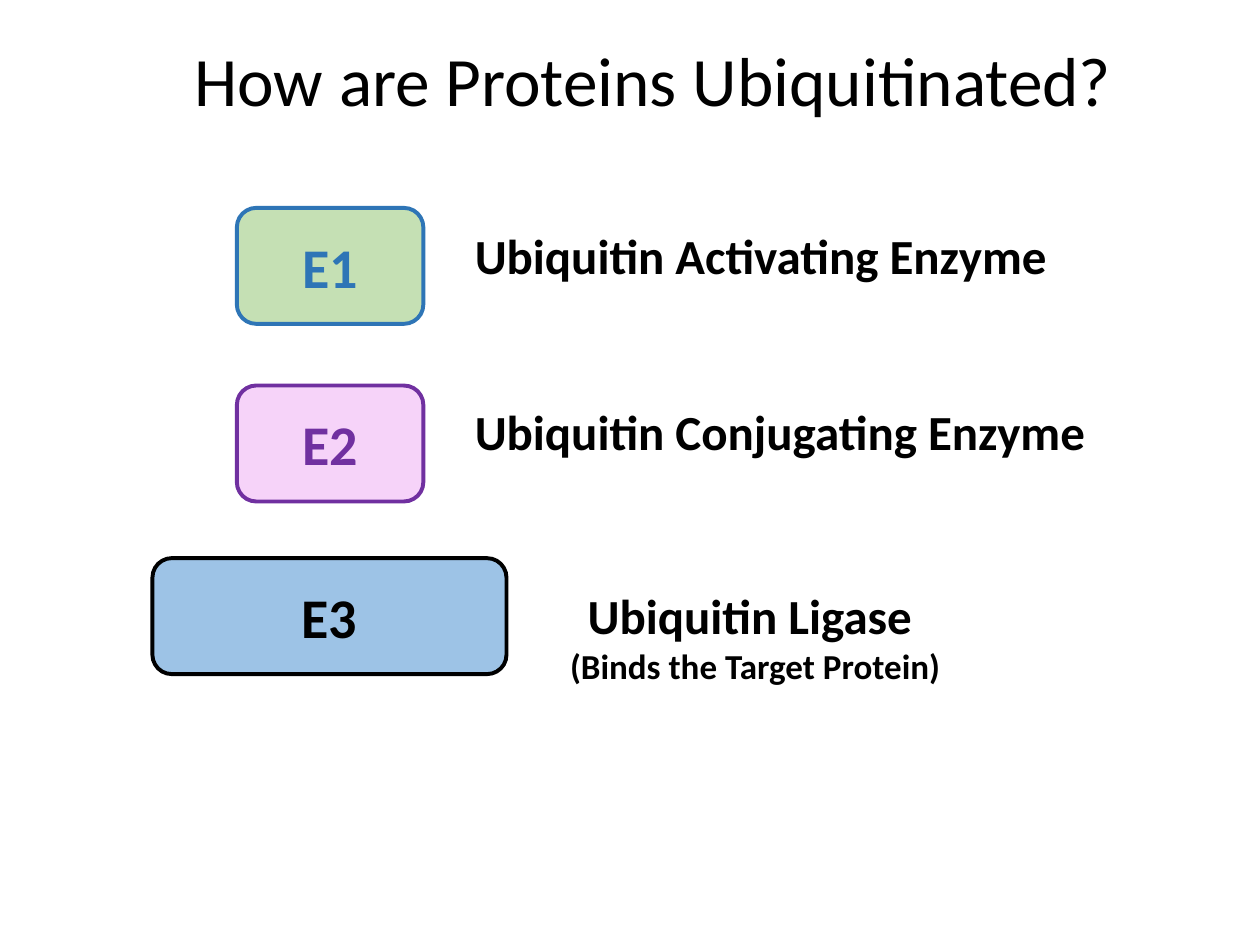
"""Build a slide that introduces the E1, E2 and E3 enzymes of ubiquitination."""
from dataclasses import dataclass

import pptx
import pptx.dml.color
import pptx.enum.shapes
import pptx.enum.text
import pptx.util

Inches = pptx.util.Inches
Pt = pptx.util.Pt
ALIGN = pptx.enum.text.PP_ALIGN
ANCHOR = pptx.enum.text.MSO_ANCHOR
AUTO_SIZE = pptx.enum.text.MSO_AUTO_SIZE
BLACK = "000000"
BOX_HEIGHT = 0.92


@dataclass
class Line:
    text: str
    size: float
    bold: bool = True
    color: str = BLACK


@dataclass
class Box:
    left: float
    top: float
    width: float
    height: float


@dataclass
class Enzyme:
    name: str
    box: Box
    fill: str
    color: str
    label_box: Box
    label: list[Line]
    align: ALIGN = ALIGN.LEFT


ENZYMES = [
    Enzyme("E1", Box(1.88, 1.65, 1.48, BOX_HEIGHT), "C5E0B4", "2E75B6",
           Box(3.67, 1.74, 4.8, 0.57), [Line("Ubiquitin Activating Enzyme", 28)]),
    Enzyme("E2", Box(1.88, 3.06, 1.48, BOX_HEIGHT), "F6D3F9", "7030A0",
           Box(3.67, 3.14, 5.1, 0.57), [Line("Ubiquitin Conjugating Enzyme", 28)]),
    Enzyme("E3", Box(1.21, 4.43, 2.81, BOX_HEIGHT), "9DC3E6", BLACK,
           Box(4.41, 4.6, 3.17, 0.91),
           [Line("Ubiquitin Ligase ", 28), Line("(Binds the Target Protein)", 20)],
           ALIGN.CENTER),
]


def rgb(color: str) -> pptx.dml.color.RGBColor:
    return pptx.dml.color.RGBColor.from_string(color)


def lengths(box: Box) -> list[pptx.util.Length]:
    return [Inches(v) for v in (box.left, box.top, box.width, box.height)]


def write(tf, lines: list[Line], align: ALIGN, **frame) -> None:
    for name, value in frame.items():
        setattr(tf, name, value)
    for i, line in enumerate(lines):
        p = tf.add_paragraph() if i else tf.paragraphs[0]
        p.alignment = align
        r = p.add_run()
        r.text = line.text
        font = {"name": "Calibri", "size": Pt(line.size), "bold": line.bold}
        for name, value in font.items():
            setattr(r.font, name, value)
        r.font.color.rgb = rgb(line.color)


def add_title(s, text: str, box: Box) -> None:
    sp = s.shapes.title
    sp.left, sp.top, sp.width, sp.height = lengths(box)
    write(sp.text_frame, [Line(text, 39.6, False)], ALIGN.LEFT,
          word_wrap=True, auto_size=AUTO_SIZE.NONE, vertical_anchor=ANCHOR.MIDDLE)
    sp.text_frame.paragraphs[0].line_spacing = 0.9


def add_enzyme(s, enzyme: Enzyme) -> None:
    sp = s.shapes.add_shape(
        pptx.enum.shapes.MSO_SHAPE.ROUNDED_RECTANGLE, *lengths(enzyme.box))
    sp.shadow.inherit = False
    sp.fill.solid()
    sp.fill.fore_color.rgb = rgb(enzyme.fill)
    sp.line.color.rgb = rgb(enzyme.color)
    sp.line.width = Pt(2.25)
    write(sp.text_frame, [Line(enzyme.name, 32, color=enzyme.color)],
          ALIGN.CENTER, vertical_anchor=ANCHOR.MIDDLE)
    label = s.shapes.add_textbox(*lengths(enzyme.label_box))
    write(label.text_frame, enzyme.label, enzyme.align,
          word_wrap=False, auto_size=AUTO_SIZE.SHAPE_TO_FIT_TEXT)


def main() -> None:
    prs = pptx.Presentation()
    prs.slide_width, prs.slide_height = Inches(10), Inches(7.5)
    s = prs.slides.add_slide(prs.slide_layouts[5])
    add_title(s, " How are Proteins Ubiquitinated?", Box(1.32, 0.21, 7.99, 0.92))
    for enzyme in ENZYMES:
        add_enzyme(s, enzyme)
    prs.save("out.pptx")


if __name__ == "__main__":
    main()
